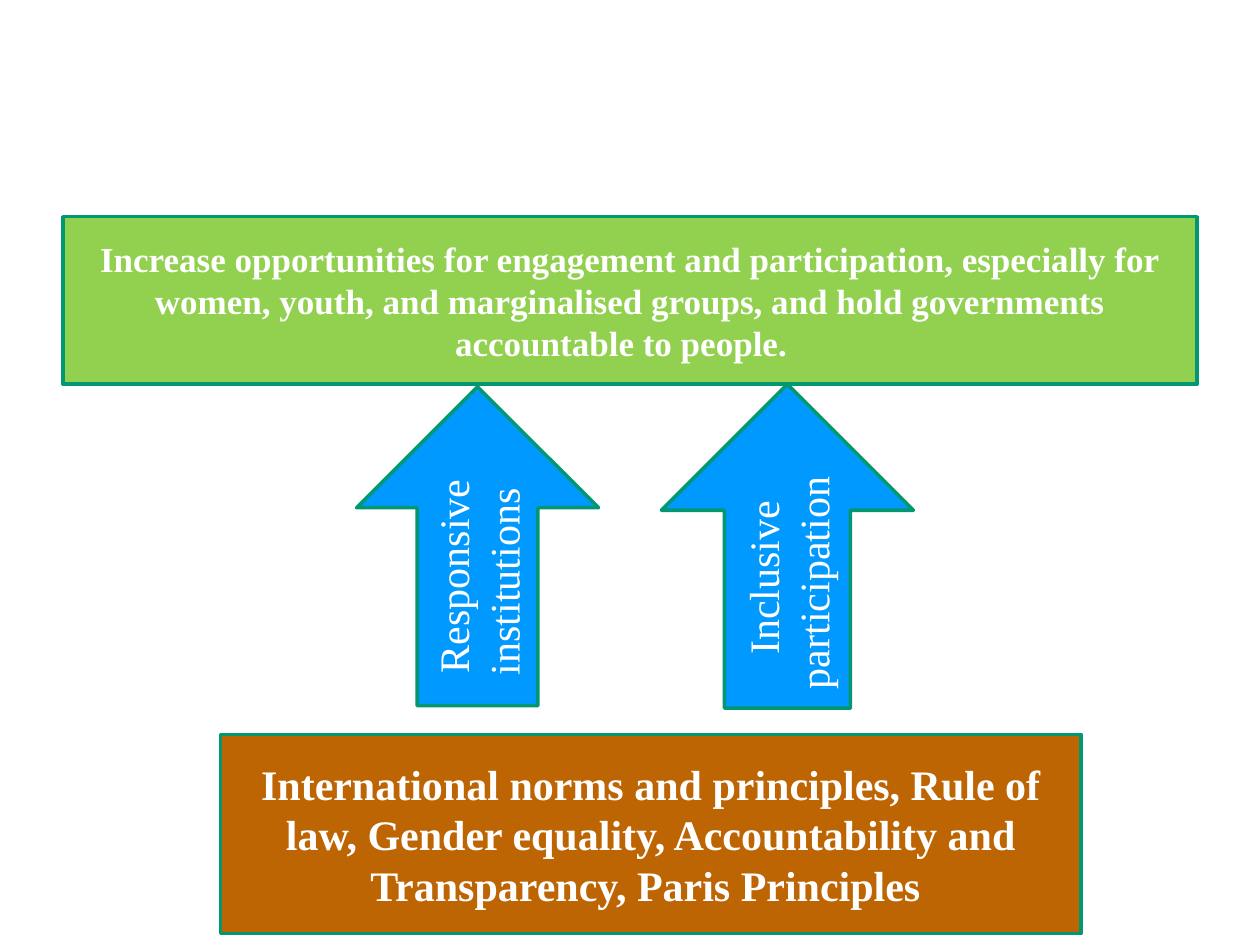
from pptx import Presentation
from pptx.dml.color import RGBColor
from pptx.enum.shapes import MSO_SHAPE
from pptx.enum.text import MSO_ANCHOR, PP_ALIGN
from pptx.util import Inches, Pt

WHITE = RGBColor(0xFF, 0xFF, 0xFF)
GREEN = RGBColor(0x92, 0xD0, 0x50)
BLUE = RGBColor(0x00, 0x99, 0xFF)
BROWN = RGBColor(0xBD, 0x64, 0x03)
TEAL = RGBColor(0x00, 0x97, 0x71)
FONT = "Times New Roman"


def block(slide, kind, box, fill, text, size, bold):
    shape = slide.shapes.add_shape(kind, *(Inches(n) for n in box))
    shape.shadow.inherit = False
    shape.fill.solid()
    shape.fill.fore_color.rgb = fill
    shape.line.color.rgb = TEAL
    shape.line.width = Pt(2)
    frame = shape.text_frame
    frame.word_wrap = True
    frame.vertical_anchor = MSO_ANCHOR.MIDDLE
    line = frame.paragraphs[0]
    line.text = text
    line.alignment = PP_ALIGN.CENTER
    font = line.font
    font.name = FONT
    font.size = Pt(size)
    font.bold = bold
    font.color.rgb = WHITE
    return shape


def panel(slide, box, fill, text, size):
    block(slide, MSO_SHAPE.RECTANGLE, box, fill, text, size, True)


def arrow(slide, box, text):
    shape = block(slide, MSO_SHAPE.UP_ARROW, box, BLUE, text, 24, False)
    shape.element.txBody.bodyPr.set("vert", "vert270")


def main():
    deck = Presentation()
    deck.slide_width = Inches(10)
    deck.slide_height = Inches(7.5)
    slide = deck.slides.add_slide(deck.slide_layouts[6])
    panel(slide, (0.5, 1.72, 9, 1.33), GREEN,
          "Increase opportunities for engagement and participation, especially "
          "for women, youth, and marginalised groups, and hold governments "
          "accountable to people.  ", 20)
    arrow(slide, (2.83, 3.07, 1.92, 2.53), "Responsive institutions ")
    arrow(slide, (5.25, 3.05, 2, 2.57), "Inclusive participation ")
    panel(slide, (1.75, 5.83, 6.83, 1.58), BROWN,
          "International norms and principles, Rule of law, Gender equality, "
          "Accountability and Transparency, Paris Principles ", 24)
    deck.save("out.pptx")


if __name__ == "__main__":
    main()
